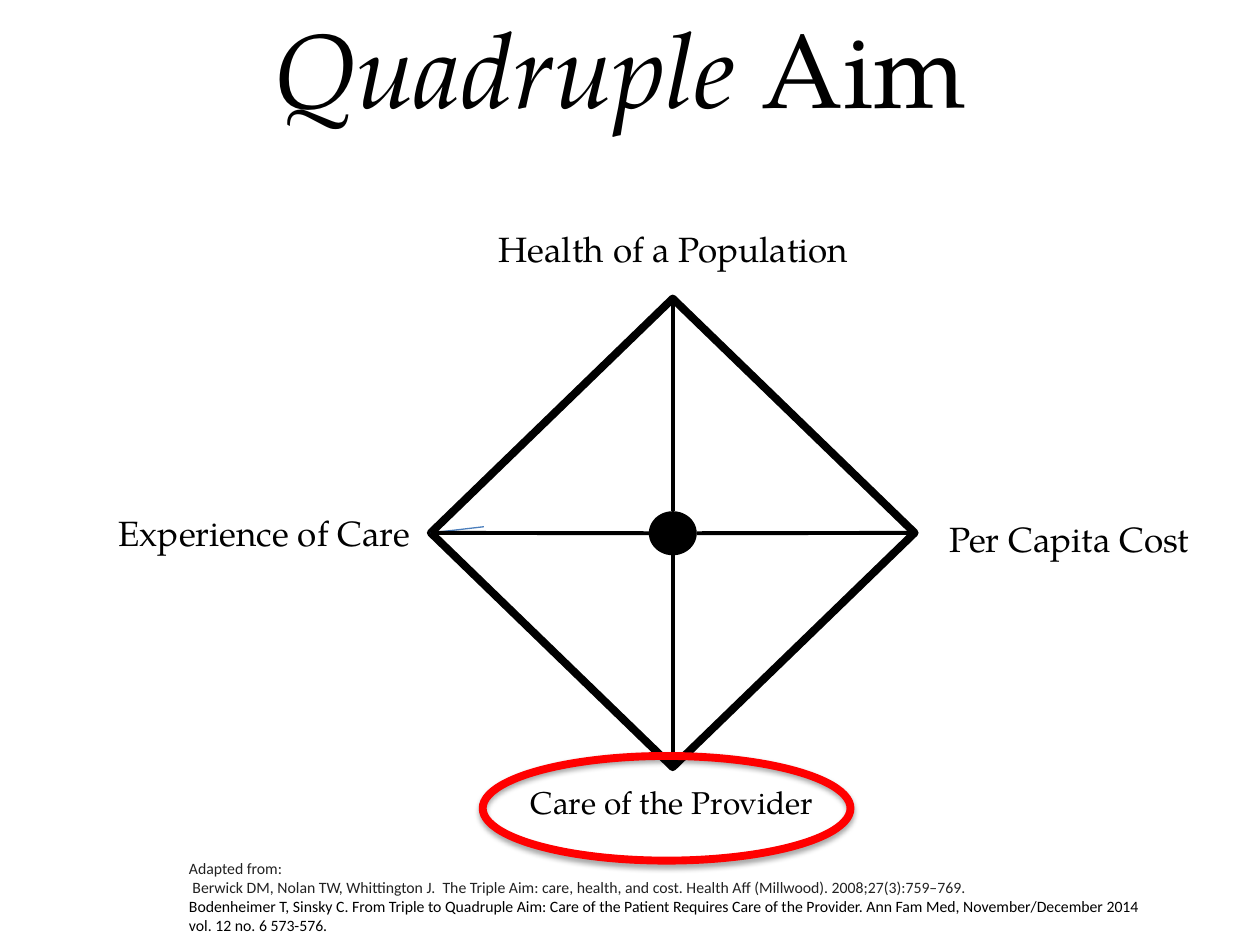
from dataclasses import dataclass

from lxml.etree import SubElement
from pptx import Presentation
from pptx.dml.color import RGBColor
from pptx.enum.shapes import MSO_CONNECTOR, MSO_SHAPE
from pptx.enum.text import MSO_ANCHOR, MSO_AUTO_SIZE, PP_ALIGN
from pptx.oxml import parse_xml
from pptx.oxml.ns import qn
from pptx.shapes.autoshape import Shape
from pptx.shapes.connector import Connector
from pptx.slide import Slide
from pptx.util import Pt

COLORS = {
    "black": "000000",
    "white": "FFFFFF",
    "citation": "222222",
    "accent": "4B7EBC",
    "highlight": "FF0000",
}
SERIF = "TeX Gyre Pagella"
SANS = "Calibri"
DRAWING_NS = "http://schemas.openxmlformats.org/drawingml/2006/main"


@dataclass
class Box:
    left: float
    top: float
    width: float
    height: float

    @property
    def center_x(self) -> float:
        return self.left + self.width / 2

    @property
    def center_y(self) -> float:
        return self.top + self.height / 2

    def points(self) -> tuple:
        return tuple(Pt(n) for n in (self.left, self.top, self.width, self.height))

    def side_middles(self) -> list[tuple[float, float]]:
        """Middles of the sides in connection order: top, left, bottom, right."""
        return [
            (self.center_x, self.top),
            (self.left, self.center_y),
            (self.center_x, self.top + self.height),
            (self.left + self.width, self.center_y),
        ]


@dataclass
class Label:
    text: str
    box: Box
    size: float = 20


DIAMOND = Box(246.2, 170.6, 276.5, 267.8)
HUB = Box(DIAMOND.center_x - 13.7, DIAMOND.center_y - 12.4, 27.4, 25.2)
RING = Box(275.8, 432, 210.2, 59.8)
TITLE = Box(149.8, -1.4, 414.7, 79.9)
SOURCES = Box(108, 487.4, 552.2, 46.8)

LABELS = [
    Label("Health of a Population", Box(276.5, 126.7, 216.7, 31.7)),
    Label("Experience of Care", Box(59.8, 288.7, 182.9, 31.7)),
    Label("Care of the Provider", Box(295.2, 444.2, 177.8, 28.8), 18),
    Label("Per Capita Cost", Box(534.2, 292.3, 154.1, 31.7)),
]
CITATIONS = [
    ("Adapted from:", "citation"),
    (" Berwick DM, Nolan TW, Whittington J.  The Triple Aim: care, health, and cost. "
     "Health Aff (Millwood). 2008;27(3):759–769.", "citation"),
    ("Bodenheimer T, Sinsky C. From Triple to Quadruple Aim: Care of the Patient "
     "Requires Care of the Provider. Ann Fam Med, November/December 2014 "
     "vol. 12 no. 6 573-576.", "black"),
]


def color(name: str) -> RGBColor:
    return RGBColor.from_string(COLORS[name])


def set_font(paragraph, name: str, size: float, color_name: str = "black") -> None:
    paragraph.font.name = name
    paragraph.font.size = Pt(size)
    paragraph.font.color.rgb = color(color_name)


def add_title(slide: Slide) -> None:
    title = slide.shapes.title
    title.left, title.top, title.width, title.height = TITLE.points()
    frame = title.text_frame
    frame.word_wrap = False
    frame.auto_size = MSO_AUTO_SIZE.NONE
    frame.vertical_anchor = MSO_ANCHOR.TOP
    paragraph = frame.paragraphs[0]
    paragraph.alignment = PP_ALIGN.LEFT
    set_font(paragraph, SERIF, 60)
    for text, italic in (("Quadruple ", True), ("Aim", False)):
        run = paragraph.add_run()
        run.text = text
        run.font.italic = italic


def add_label(slide: Slide, label: Label) -> None:
    frame = slide.shapes.add_textbox(*label.box.points()).text_frame
    frame.word_wrap = False
    paragraph = frame.paragraphs[0]
    paragraph.text = label.text
    paragraph.alignment = PP_ALIGN.CENTER
    set_font(paragraph, SERIF, label.size)


def add_plain_shape(slide: Slide, kind: MSO_SHAPE, box: Box, fill: str | None = None,
                    line: str | None = None, line_width: float = 4.5) -> Shape:
    shape = slide.shapes.add_shape(kind, *box.points())
    shape.shadow.inherit = False
    if fill:
        shape.fill.solid()
        shape.fill.fore_color.rgb = color(fill)
    else:
        shape.fill.background()
    if line:
        shape.line.color.rgb = color(line)
        shape.line.width = Pt(line_width)
    else:
        shape.line.fill.background()
    return shape


def add_line(slide: Slide, start: tuple[float, float], end: tuple[float, float],
             color_name: str, width: float) -> Connector:
    ends = [Pt(n) for n in (*start, *end)]
    connector = slide.shapes.add_connector(MSO_CONNECTOR.STRAIGHT, *ends)
    connector.line.color.rgb = color(color_name)
    connector.line.width = Pt(width)
    SubElement(connector.element.spPr, qn("a:effectLst"))
    return connector


def add_soft_shadow(shape: Shape) -> None:
    effects = shape.element.spPr.find(qn("a:effectLst"))
    effects.append(parse_xml(
        f'<a:outerShdw xmlns:a="{DRAWING_NS}" blurRad="{Pt(3.1)}" dist="{Pt(1.8)}" '
        f'dir="5400000" rotWithShape="0"><a:srgbClr val="{COLORS["black"]}">'
        '<a:alpha val="35000"/></a:srgbClr></a:outerShdw>'))


def add_sources(slide: Slide) -> None:
    shape = add_plain_shape(slide, MSO_SHAPE.RECTANGLE, SOURCES, fill="white")
    frame = shape.text_frame
    frame.word_wrap = True
    frame.vertical_anchor = MSO_ANCHOR.MIDDLE
    frame.margin_left = frame.margin_right = frame.margin_bottom = 0
    frame.margin_top = Pt(2.9)
    for index, (text, color_name) in enumerate(CITATIONS):
        paragraph = frame.add_paragraph() if index else frame.paragraphs[0]
        paragraph.text = text
        paragraph.alignment = PP_ALIGN.LEFT
        set_font(paragraph, SANS, 9, color_name)


def main() -> None:
    presentation = Presentation()
    presentation.slide_width, presentation.slide_height = Pt(720), Pt(540)
    slide = presentation.slides.add_slide(presentation.slide_layouts[5])

    add_title(slide)
    diamond = add_plain_shape(slide, MSO_SHAPE.DIAMOND, DIAMOND, line="black")
    left_corner = DIAMOND.side_middles()[1]
    stub = add_line(slide, left_corner, (276.5, 301), "accent", 0.75)
    stub.begin_connect(diamond, 1)
    add_plain_shape(slide, MSO_SHAPE.OVAL, HUB, fill="black")
    spokes = zip(DIAMOND.side_middles(), HUB.side_middles())
    for side, (corner, hub_edge) in enumerate(spokes):
        spoke = add_line(slide, corner, hub_edge, "black", 2.25)
        spoke.begin_connect(diamond, side)
    for label in LABELS:
        add_label(slide, label)
    add_sources(slide)
    add_soft_shadow(add_plain_shape(slide, MSO_SHAPE.OVAL, RING, line="highlight"))

    presentation.save("out.pptx")


if __name__ == "__main__":
    main()
